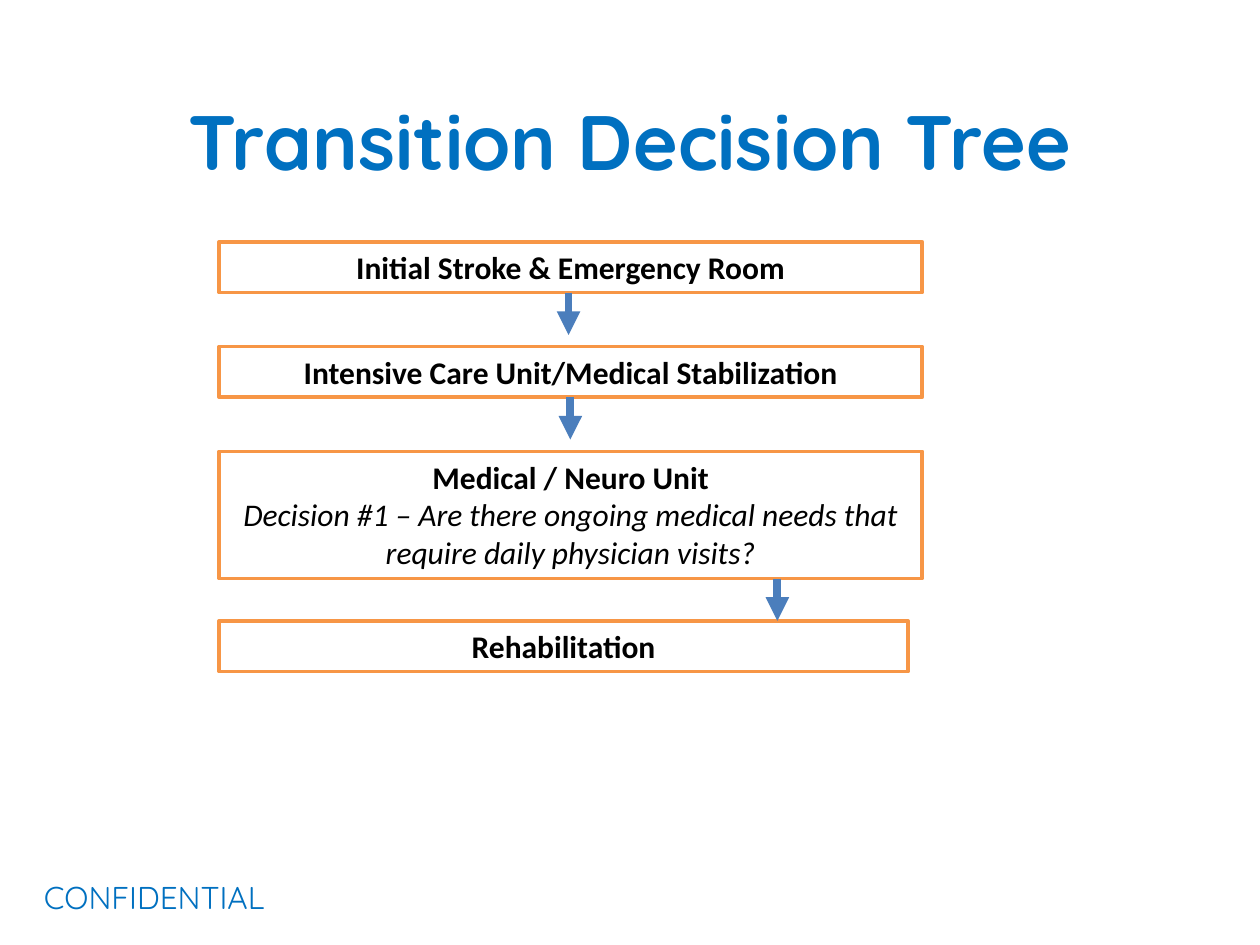
from pptx import Presentation
from pptx.dml.color import RGBColor
from pptx.enum.shapes import MSO_CONNECTOR as Connector, MSO_SHAPE as Shape
from pptx.enum.text import MSO_ANCHOR as Anchor, PP_ALIGN as Align
from pptx.oxml.ns import qn
from pptx.util import Pt
from lxml.etree import SubElement


def color(value):
    return RGBColor.from_string(value)


def style(para, font_name, size, value, bold=False, italic=False):
    for span in para.runs:
        font = span.font
        font.name, font.size = font_name, Pt(size)
        font.bold, font.italic = bold, italic
        font.color.rgb = color(value)


deck = Presentation()
deck.slide_width, deck.slide_height = Pt(720), Pt(540)
page = deck.slides.add_slide(deck.slide_layouts[6])

# Footer and title
headings = [
    ("CONFIDENTIAL", (18, 498.2, 141.8, 28.8), 18, False, Align.LEFT, Anchor.TOP),
    ("Transition Decision Tree", (36, 48.2, 648, 63.4), 44, True, Align.CENTER, Anchor.MIDDLE),
]
for text, place, size, bold, align, anchor in headings:
    box = page.shapes.add_textbox(*map(Pt, place))
    frame = box.text_frame
    frame.word_wrap = bold
    frame.vertical_anchor = anchor
    frame.text = text
    frame.paragraphs[0].alignment = align
    style(frame.paragraphs[0], "Quicksand", size, "0070C0", bold)

# Care stages: top, width, height, heading and optional question
stages = [
    (138.2, 401.8, 29, ["Initial Stroke & Emergency Room"]),
    (198, 401.8, 29, ["Intensive Care Unit/Medical Stabilization"]),
    (257.9, 401.8, 72.7, [
        "Medical / Neuro Unit",
        "Decision #1 – Are there ongoing medical needs that require daily physician visits?",
    ]),
    (354.8, 393.8, 29, ["Rehabilitation"]),
]
for top, width, height, lines in stages:
    box = page.shapes.add_shape(Shape.RECTANGLE, Pt(125.2), Pt(top), Pt(width), Pt(height))
    box.shadow.inherit = False
    box.fill.solid()
    box.fill.fore_color.rgb = color("FFFFFF")
    box.line.color.rgb = color("F79646")
    box.line.width = Pt(2)
    frame = box.text_frame
    frame.word_wrap = True
    frame.vertical_anchor = Anchor.TOP
    frame.text = "\n".join(lines)
    for index, para in enumerate(frame.paragraphs):
        para.alignment = Align.CENTER
        style(para, "Calibri", 18, "000000", bold=index == 0, italic=index > 0)

# Arrows from the bottom of each stage towards the next
for x, (top, _, height, _) in zip((324.9, 325.9, 444.2), stages):
    start = top + height
    arrow = page.shapes.add_connector(
        Connector.STRAIGHT, Pt(x), Pt(start), Pt(x), Pt(start + 24.2))
    arrow.line.color.rgb = color("4B7EBC")
    arrow.line.width = Pt(4.5)
    SubElement(arrow.line._get_or_add_ln(), qn("a:tailEnd"), type="triangle")
    SubElement(arrow._element.spPr, qn("a:effectLst"))

deck.save("out.pptx")
